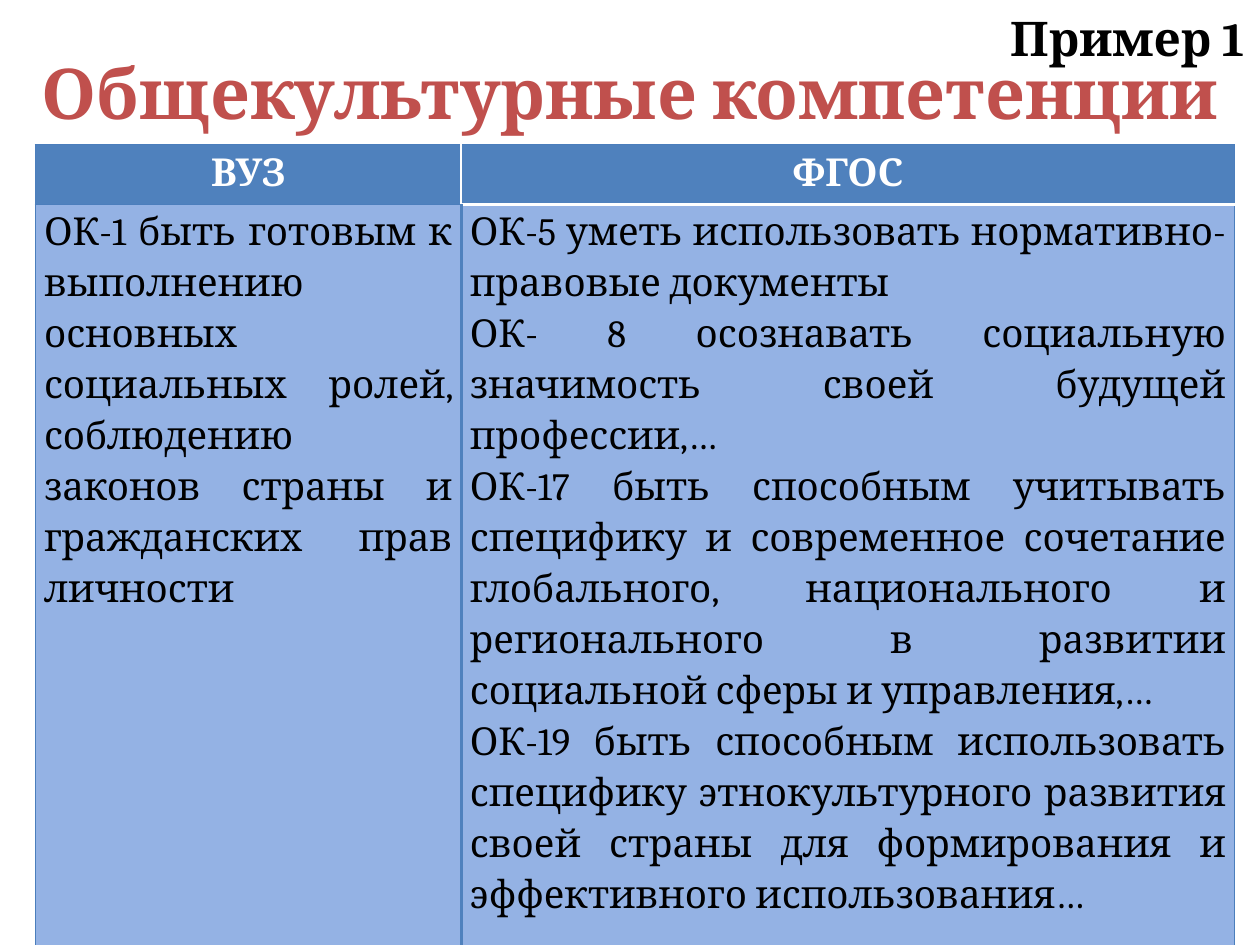
from lxml import etree
from pptx import Presentation
from pptx.dml.color import RGBColor
from pptx.enum.text import MSO_ANCHOR, PP_ALIGN
from pptx.oxml.ns import qn
from pptx.util import Inches, Pt

CENTER, RIGHT, JUSTIFY = PP_ALIGN.CENTER, PP_ALIGN.RIGHT, PP_ALIGN.JUSTIFY
MIDDLE = MSO_ANCHOR.MIDDLE
FONT = "Cambria"
COLORS = {
    "title": "C0504D",
    "text": "000000",
    "white": "FFFFFF",
    "header": "4F81BD",
    "body": "94B2E4",
    "edge": "4B7EBC",
}
COLS = (3.38, 6.14)
ROWS = (0.47, 5.69)
HEADERS = ("ВУЗ", "ФГОС")
BODY = (
    ["ОК-1 быть готовым к выполнению основных социальных ролей, "
     "соблюдению законов страны и гражданских прав личности"],
    ["ОК-5 уметь использовать нормативно-правовые документы",
     "ОК- 8 осознавать социальную значимость своей будущей профессии,…",
     "ОК-17 быть способным учитывать специфику и современное сочетание "
     "глобального, национального и регионального в развитии социальной "
     "сферы и управления,…",
     "ОК-19 быть способным использовать специфику этнокультурного развития "
     "своей страны для формирования и эффективного использования…"],
)
# Borders by row and column: side -> (colour, width in points)
EDGE, RULE, DIVIDER = ("edge", 0.75), ("white", 2), ("header", 2)
BORDERS = (
    ({"L": EDGE, "T": EDGE, "B": EDGE},
     {"R": EDGE, "T": EDGE, "B": RULE}),
    ({"L": EDGE, "R": DIVIDER, "T": EDGE, "B": EDGE},
     {"L": DIVIDER, "R": EDGE, "T": RULE, "B": EDGE}),
)


def rgb(name):
    return RGBColor.from_string(COLORS[name])


def write(tf, lines, size=22, color="text", bold=False, align=CENTER, spacing=None):
    for i, line in enumerate(lines):
        p = tf.paragraphs[0] if i == 0 else tf.add_paragraph()
        p.alignment = align
        if spacing:
            p.line_spacing = spacing
        r = p.add_run()
        r.text = line
        r.font.name, r.font.size, r.font.bold = FONT, Pt(size), bold
        r.font.color.rgb = rgb(color)


def add_label(s, text, box, **fmt):
    sp = s.shapes.add_textbox(*(Inches(v) for v in box))
    tf = sp.text_frame
    tf.word_wrap = True
    tf.vertical_anchor = MIDDLE
    write(tf, [text], bold=True, **fmt)


def set_borders(cell, borders):
    tcPr = cell._tc.get_or_add_tcPr()
    # Border lines come before the fill, in the order L, R, T, B
    for i, side in enumerate(k for k in "LRTB" if k in borders):
        color, width = borders[side]
        ln = etree.Element(qn(f"a:ln{side}"), w=str(Pt(width)))
        fill = etree.SubElement(ln, qn("a:solidFill"))
        etree.SubElement(fill, qn("a:srgbClr"), val=COLORS[color])
        tcPr.insert(i, ln)


def fill_cell(cell, lines, fill, borders, **fmt):
    cell.margin_left = cell.margin_right = Inches(0.07)
    cell.margin_top = cell.margin_bottom = 0
    cell.fill.solid()
    cell.fill.fore_color.rgb = rgb(fill)
    set_borders(cell, borders)
    write(cell.text_frame, lines, spacing=1.15, **fmt)


def add_competence_table(s, left, top):
    box = (Inches(v) for v in (left, top, sum(COLS), sum(ROWS)))
    table = s.shapes.add_table(len(ROWS), len(COLS), *box).table
    for row, height in zip(table.rows, ROWS):
        row.height = Inches(height)
    for c, width in enumerate(COLS):
        table.columns[c].width = Inches(width)
        fill_cell(table.cell(0, c), [HEADERS[c]], "header", BORDERS[0][c],
                  color="white", bold=True)
        fill_cell(table.cell(1, c), BODY[c], "body", BORDERS[1][c], align=JUSTIFY)


def main():
    prs = Presentation()
    prs.slide_width, prs.slide_height = Inches(10), Inches(7.5)
    s = prs.slides.add_slide(prs.slide_layouts[6])
    # Title
    add_label(s, "Общекультурные компетенции", (0, 0.3, 10, 0.85),
              size=40, color="title")
    # Comparison of competences
    add_competence_table(s, 0.28, 1.15)
    # Example number
    add_label(s, "Пример 1", (0.38, 0, 9.59, 0.6), size=27.3, align=RIGHT)
    prs.save("out.pptx")


if __name__ == "__main__":
    main()
